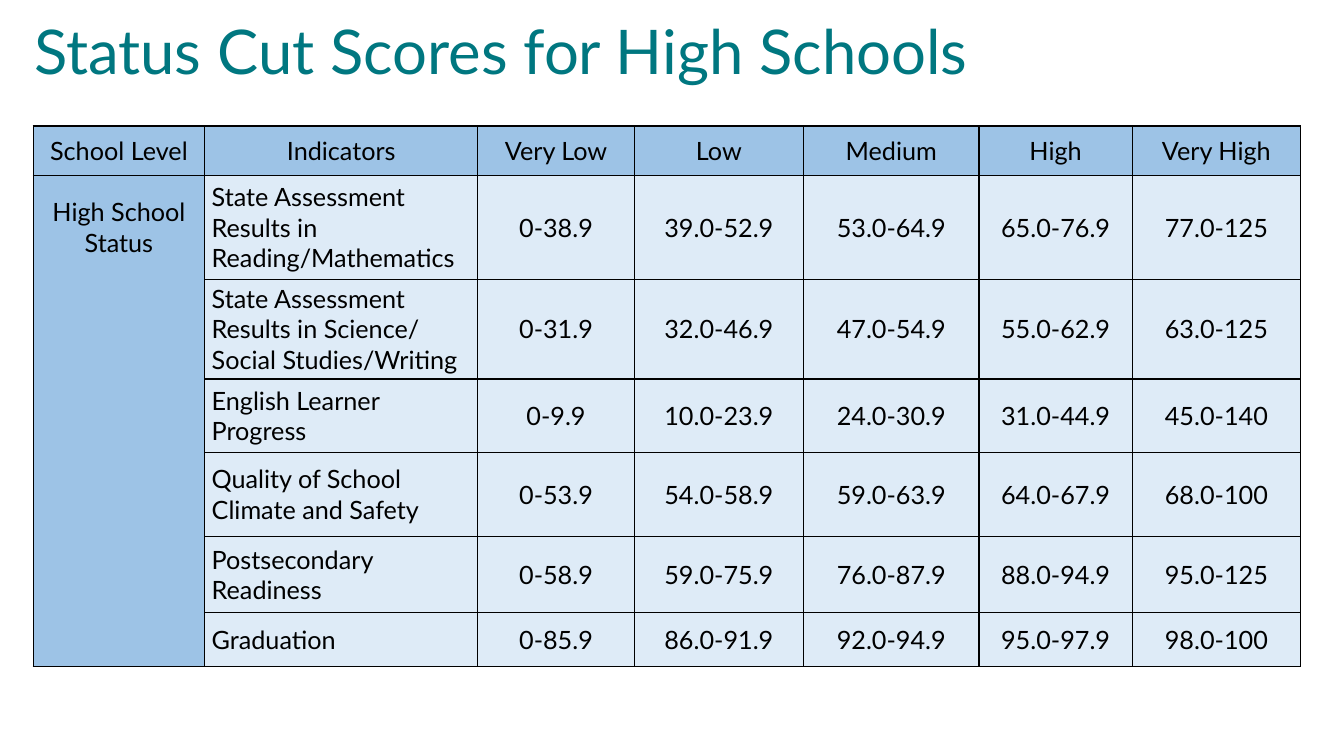
import dataclasses

import pptx
import pptx.dml.color
import pptx.enum.text
import pptx.oxml
import pptx.oxml.ns
import pptx.util

Inches = pptx.util.Inches
Pt = pptx.util.Pt
Color = pptx.dml.color.RGBColor.from_string
ALIGN = pptx.enum.text.PP_ALIGN
MIDDLE = pptx.enum.text.MSO_ANCHOR.MIDDLE


@dataclasses.dataclass(frozen=True)
class Theme:
    font: str = "Lato"
    title_color: str = "007780"
    text_color: str = "000000"
    border_color: str = "000000"
    header_fill: str = "9DC3E6"
    body_fill: str = "DEEBF7"
    title_size: int = 44
    table_size: int = 18
    border_width: int = 1


THEME = Theme()

COLUMN_WIDTHS = [1.7, 2.71, 1.55, 1.68, 1.74, 1.52, 1.67]
ROW_HEIGHTS = [0.49, 1.03, 0.99, 0.73, 0.83, 0.76, 0.53]
CUT_SCORES = [
    ["School Level", "Indicators", "Very Low", "Low", "Medium", "High", "Very High"],
    ["High School\nStatus", "State Assessment Results in Reading/Mathematics",
     "0-38.9", "39.0-52.9", "53.0-64.9", "65.0-76.9", "77.0-125"],
    ["", "State Assessment Results in Science/\vSocial Studies/Writing",
     "0-31.9", "32.0-46.9", "47.0-54.9", "55.0-62.9", "63.0-125"],
    ["", "English Learner Progress",
     "0-9.9", "10.0-23.9", "24.0-30.9", "31.0-44.9", "45.0-140"],
    ["", "Quality of School Climate and Safety",
     "0-53.9", "54.0-58.9", "59.0-63.9", "64.0-67.9", "68.0-100"],
    ["", "Postsecondary Readiness",
     "0-58.9", "59.0-75.9", "76.0-87.9", "88.0-94.9", "95.0-125"],
    ["", "Graduation",
     "0-85.9", "86.0-91.9", "92.0-94.9", "95.0-97.9", "98.0-100"],
]


def set_attributes(target, values):
    for name, value in values.items():
        setattr(target, name, value)


def format_text(text_frame, size, color, alignment):
    for paragraph in text_frame.paragraphs:
        paragraph.alignment = alignment
        for run in paragraph.runs:
            set_attributes(run.font, {"name": THEME.font, "size": Pt(size)})
            run.font.color.rgb = Color(color)


def add_title(slide, left, top, width, height):
    box = slide.shapes.add_textbox(*map(Inches, (left, top, width, height)))
    text_frame = box.text_frame
    set_attributes(text_frame, {
        "word_wrap": True,
        "vertical_anchor": MIDDLE,
        "text": "Status Cut Scores for High Schools",
    })
    format_text(text_frame, THEME.title_size, THEME.title_color, ALIGN.LEFT)
    paragraph = text_frame.paragraphs[0]
    paragraph.line_spacing = 0.9
    paragraph._p.get_or_add_pPr().set("marL", str(Inches(0.25)))


def set_borders(cell, hidden_sides):
    """Draw all four borders except those named in hidden_sides."""
    properties = cell._tc.get_or_add_tcPr()
    for side in "LRTB":
        if side in hidden_sides:
            paint = "<a:noFill/>"
        else:
            paint = f'<a:solidFill><a:srgbClr val="{THEME.border_color}"/></a:solidFill>'
        properties.append(pptx.oxml.parse_xml(
            f'<a:ln{side} {pptx.oxml.ns.nsdecls("a")} '
            f'w="{Pt(THEME.border_width)}">{paint}</a:ln{side}>'))


def hidden_sides(row, column):
    """The school level column reads as one block below its header."""
    sides = ""
    if column == 0 and row > 1:
        sides += "T"
    if column == 0 and 0 < row < len(CUT_SCORES) - 1:
        sides += "B"
    return sides


def add_score_table(slide, left, top):
    frame = slide.shapes.add_table(
        len(ROW_HEIGHTS), len(COLUMN_WIDTHS), Inches(left), Inches(top),
        Inches(sum(COLUMN_WIDTHS)), Inches(sum(ROW_HEIGHTS)))
    table = frame.table
    set_attributes(table, {"first_row": False, "horz_banding": False})
    for column, width in zip(table.columns, COLUMN_WIDTHS):
        column.width = Inches(width)
    for row, height in zip(table.rows, ROW_HEIGHTS):
        row.height = Inches(height)

    for row, texts in enumerate(CUT_SCORES):
        for column, text in enumerate(texts):
            cell = table.cell(row, column)
            set_attributes(cell, {
                "margin_left": Inches(0.07), "margin_right": Inches(0.07),
                "margin_top": 0, "margin_bottom": 0,
                "vertical_anchor": MIDDLE,
            })
            set_borders(cell, hidden_sides(row, column))
            is_header = row == 0 or column == 0
            cell.fill.solid()
            cell.fill.fore_color.rgb = Color(
                THEME.header_fill if is_header else THEME.body_fill)
            cell.text_frame.text = text
            is_indicator = column == 1 and row > 0
            format_text(cell.text_frame, THEME.table_size, THEME.text_color,
                        ALIGN.LEFT if is_indicator else ALIGN.CENTER)


def main():
    presentation = pptx.Presentation()
    presentation.slide_width = Inches(13.33)
    presentation.slide_height = Inches(7.5)
    slide = presentation.slides.add_slide(presentation.slide_layouts[6])
    add_title(slide, -0.01, -0.02, 13.25, 1.13)
    add_score_table(slide, 0.33, 1.25)
    presentation.save("out.pptx")


if __name__ == "__main__":
    main()
